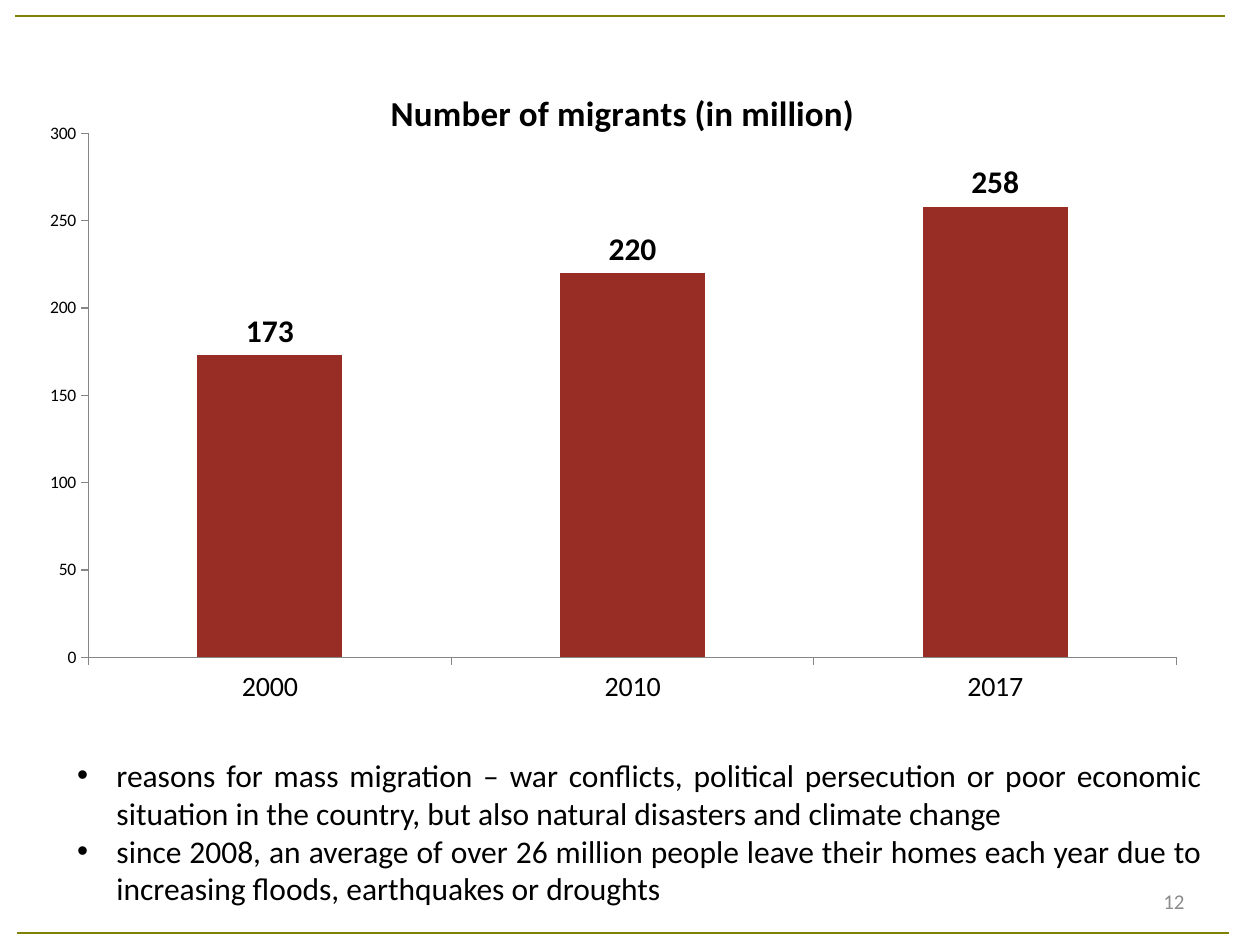
from dataclasses import dataclass

from lxml import etree
from pptx import Presentation
from pptx.chart.data import CategoryChartData
from pptx.dml.color import RGBColor
from pptx.enum.chart import XL_CHART_TYPE, XL_LABEL_POSITION, XL_TICK_MARK
from pptx.enum.shapes import MSO_CONNECTOR
from pptx.enum.text import MSO_ANCHOR, PP_ALIGN
from pptx.oxml.ns import qn
from pptx.util import Pt

COLUMNS = XL_CHART_TYPE.COLUMN_CLUSTERED
LABEL_ABOVE = XL_LABEL_POSITION.OUTSIDE_END
TICK_OUT = XL_TICK_MARK.OUTSIDE
STRAIGHT = MSO_CONNECTOR.STRAIGHT
TOP, MIDDLE = MSO_ANCHOR.TOP, MSO_ANCHOR.MIDDLE
JUSTIFY, RIGHT = PP_ALIGN.JUSTIFY, PP_ALIGN.RIGHT


@dataclass(frozen=True)
class Theme:
    font: str = "Calibri"
    text: RGBColor = RGBColor(0x00, 0x00, 0x00)
    muted: RGBColor = RGBColor(0x8C, 0x8C, 0x8C)
    rule: RGBColor = RGBColor(0x80, 0x82, 0x06)
    column: RGBColor = RGBColor(0x98, 0x2D, 0x26)
    axis: RGBColor = RGBColor(0x86, 0x86, 0x86)
    title_size: int = 20
    body_size: int = 18
    category_size: int = 16
    number_size: int = 12
    scale_size: int = 10
    bullet_indent: float = 22.5


class SlideBuilder:
    def __init__(self, slide, theme):
        self.slide = slide
        self.theme = theme

    def style(self, font, size, color=None, bold=False):
        font.name = self.theme.font
        font.size = Pt(size)
        font.bold = bold
        font.color.rgb = color or self.theme.text

    def rule(self, left, right, top):
        line = self.slide.shapes.add_connector(
            STRAIGHT, Pt(left), Pt(top), Pt(right), Pt(top))
        line.line.color.rgb = self.theme.rule
        line.line.width = Pt(0.75)
        etree.SubElement(line._element.spPr, qn("a:effectLst"))

    def text(self, position, lines, size, color, align, anchor=TOP, bullets=False):
        box = self.slide.shapes.add_textbox(*map(Pt, position))
        frame = box.text_frame
        frame.word_wrap = True
        frame.vertical_anchor = anchor
        frame.text = "\n".join(lines)
        for para in frame.paragraphs:
            para.alignment = align
            self.style(para.font, size, color)
            if bullets:
                self.bullet(para)

    def bullet(self, para):
        indent = Pt(self.theme.bullet_indent)
        properties = para._p.get_or_add_pPr()
        properties.set("marL", str(indent))
        properties.set("indent", str(-indent))
        mark = etree.Element(qn("a:buChar"), char="•")
        properties.insert(0, mark)
        mark.addprevious(etree.Element(qn("a:buFont"), typeface="Arial"))

    def place(self, element, index, **settings):
        """Set a manual layout on a chart part, as fractions of the chart."""
        for old in element.findall(qn("c:layout")):
            element.remove(old)
        layout = etree.Element(qn("c:layout"))
        manual = etree.SubElement(layout, qn("c:manualLayout"))
        for name, value in settings.items():
            etree.SubElement(manual, qn(f"c:{name}"), val=str(value))
        element.insert(index, layout)

    def column_chart(self, position, title, categories, values):
        theme = self.theme
        data = CategoryChartData()
        data.categories = categories
        data.add_series("Series 1", values)
        chart = self.slide.shapes.add_chart(COLUMNS, *map(Pt, position), data).chart
        self.style(chart.font, theme.scale_size)
        chart.has_legend = False

        # Title and plot area
        frame = chart.chart_title.text_frame
        frame.text = title
        self.style(frame.paragraphs[0].font, theme.title_size, bold=True)
        self.place(chart.chart_title._element, 1,
                   xMode="edge", yMode="edge", x=0.3, y=0.04)
        self.place(chart._chartSpace.chart.plotArea, 0,
                   layoutTarget="inner", xMode="edge", yMode="edge",
                   x=0.046, y=0.118, w=0.935, h=0.801)

        # Axes
        for axis, size in ((chart.category_axis, theme.category_size),
                           (chart.value_axis, theme.scale_size)):
            axis.has_major_gridlines = False
            axis.major_tick_mark = TICK_OUT
            axis.format.line.color.rgb = theme.axis
            axis.format.line.width = Pt(0.75)
            self.style(axis.tick_labels.font, size)
        chart.value_axis.minimum_scale = 0
        chart.value_axis.maximum_scale = 300
        chart.value_axis.major_unit = 50

        # Columns and their labels
        plot = chart.plots[0]
        plot.vary_by_categories = False
        plot.gap_width = 150
        series = plot.series[0]
        series.format.fill.solid()
        series.format.fill.fore_color.rgb = theme.column
        labels = series.data_labels
        labels.show_value = True
        labels.position = LABEL_ABOVE
        self.style(labels.font, theme.body_size, bold=True)


def main():
    deck = Presentation()
    deck.slide_width, deck.slide_height = Pt(720), Pt(540)
    theme = Theme()
    page = SlideBuilder(deck.slides.add_slide(deck.slide_layouts[6]), theme)

    # Frame rules and page number
    page.rule(8.6, 700, 9.2)
    page.rule(10, 702, 533.2)
    page.text((516, 500.5, 168, 28.75), ["12"], theme.number_size,
              theme.muted, RIGHT, MIDDLE)

    # Migrant numbers
    page.column_chart((20, 32, 665, 374), "Number of migrants (in million)",
                      ["2000", "2010", "2017"], [173, 220, 258])

    # Reasons for migration
    page.text((37, 428.5, 657, 94.5), [
        "reasons for mass migration – war conflicts, political persecution or poor "
        "economic situation in the country, but also natural disasters and climate change",
        "since 2008, an average of over 26 million people leave their homes each year "
        "due to increasing floods, earthquakes or droughts",
    ], theme.body_size, theme.text, JUSTIFY, bullets=True)

    deck.save("out.pptx")


if __name__ == "__main__":
    main()
